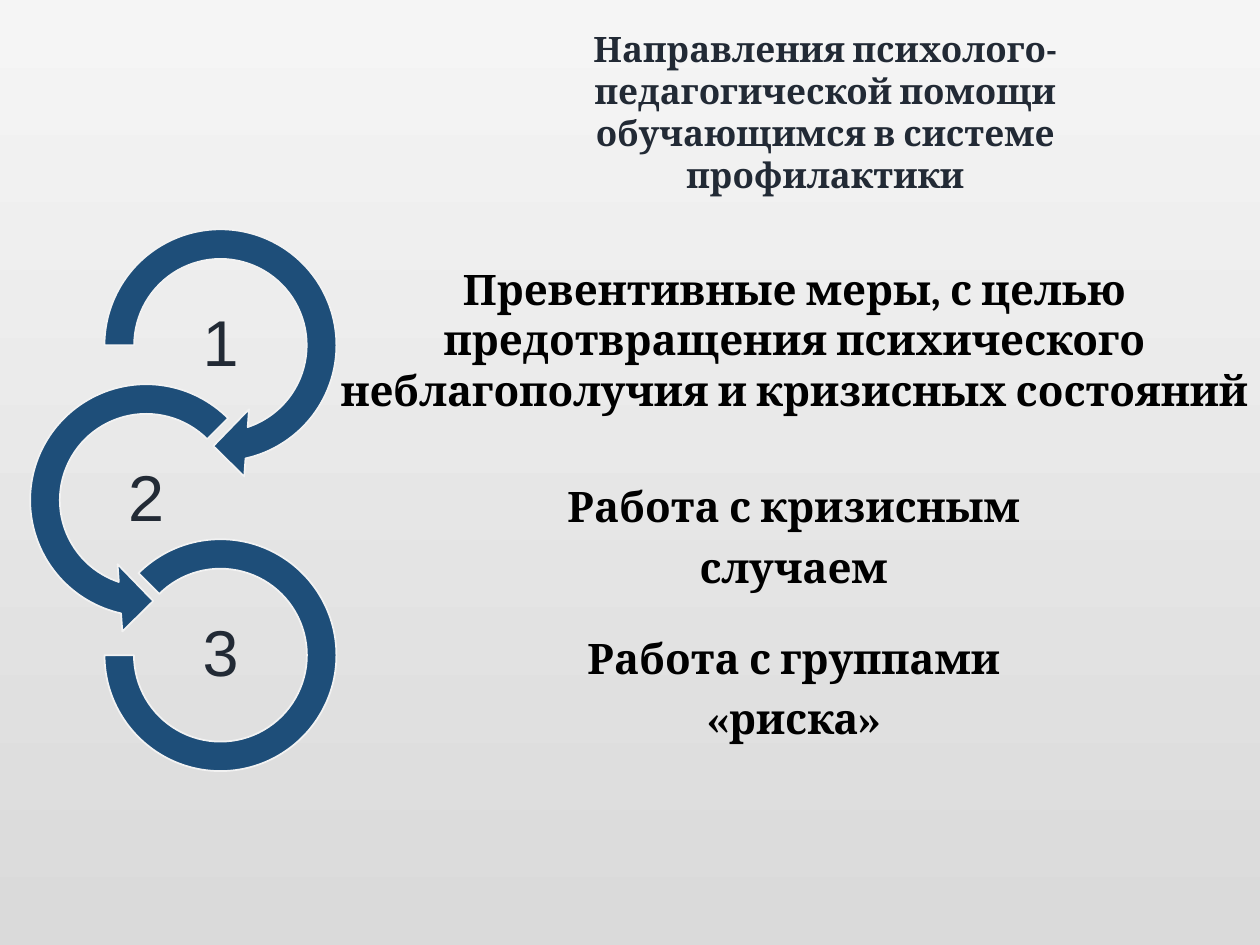
from pptx import Presentation
from pptx import util as u
from pptx.dml.color import RGBColor
from pptx.enum import shapes, text

KIND = shapes.MSO_SHAPE
INK, BLACK, BLUE, RIM = "222A35", "000000", "1E4E79", "F2F2F2"


def color(value):
    """Turn a hex string into a colour."""
    return RGBColor.from_string(value)


class Builder:
    """Hold the style and the current slide."""

    def __init__(self, deck):
        self.page = deck.slides.add_slide(deck.slide_layouts[5])
        self.group = self.page.shapes.add_group_shape()

    def background(self, top, bottom):
        """Fill the page with a vertical gradient."""
        fill = self.page.background.fill
        fill.gradient()
        fill.gradient_angle = 270
        for stop, value in zip(fill.gradient_stops, (top, bottom)):
            stop.color.rgb = color(value)

    def label(self, box, words, size, font, ink, bold=False, spacing=None):
        """Put one centred paragraph into a box."""
        frame = box.text_frame
        frame.word_wrap = True
        frame.auto_size = text.MSO_AUTO_SIZE.NONE
        frame.vertical_anchor = text.MSO_ANCHOR.TOP
        para = frame.paragraphs[0]
        para.alignment = text.PP_ALIGN.CENTER
        if spacing:
            para.line_spacing = spacing
        span = para.add_run()
        span.text = words
        span.font.size = u.Pt(size)
        span.font.name = font
        span.font.bold = bold
        span.font.color.rgb = color(ink)
        return frame

    def title(self, words, left, top, width, height):
        """Place the title."""
        box = self.page.shapes.title
        box.left, box.top = u.Inches(left), u.Inches(top)
        box.width, box.height = u.Inches(width), u.Inches(height)
        self.label(box, words, 20, "Cambria", INK, True)

    def statement(self, words, left, top, width, height, spacing=None):
        """Add a bold statement."""
        box = self.page.shapes.add_textbox(*map(u.Inches, (left, top, width, height)))
        self.label(box, words, 24, "Cambria", BLACK, True, spacing)

    def ring(self, kind, middle_x, middle_y, size, adjustments):
        """Add a ring around a middle point."""
        left, top = middle_x - size / 2, middle_y - size / 2
        shape = self.group.shapes.add_shape(kind, *map(u.Inches, (left, top, size, size)))
        for index, value in enumerate(adjustments):
            shape.adjustments[index] = value
        shape.shadow.inherit = False
        shape.fill.solid()
        shape.fill.fore_color.rgb = color(BLUE)
        shape.line.color.rgb = color(RIM)
        shape.line.width = u.Pt(1)

    def number(self, words, middle_x, middle_y):
        """Add a number inside a ring."""
        width, height = 1.19, 0.59
        left, top = middle_x - width / 2, middle_y - height / 2
        box = self.group.shapes.add_textbox(*map(u.Inches, (left, top, width, height)))
        frame = self.label(box, words, 37, "Arial", INK, spacing=0.9)
        frame.vertical_anchor = text.MSO_ANCHOR.MIDDLE
        frame.margin_left = frame.margin_right = u.Inches(0.03)
        frame.margin_top = frame.margin_bottom = u.Inches(0.03)


def main():
    """Build the slide."""
    deck = Presentation()
    deck.slide_width, deck.slide_height = u.Inches(10), u.Inches(7.5)
    builder = Builder(deck)
    builder.background("F5F5F5", "DADADA")
    builder.title(
        "Направления психолого-педагогической помощи обучающимся в системе профилактики",
        3.62, 0.17, 5.86, 1.43)

    rings = [
        (KIND.CIRCULAR_ARROW, 1.75, 2.14, (0.11, 11.42, 45, 108, 0.125)),
        (KIND.LEFT_CIRCULAR_ARROW, 1.16, 2.14, (0.11, 11.42, 63, 189, 0.125)),
        (KIND.BLOCK_ARC, 1.75, 1.84, (135, 108, 0.127)),
    ]
    for index, (kind, middle_x, size, adjustments) in enumerate(rings):
        middle_y = 2.74 + index * 1.23
        builder.ring(kind, middle_x, middle_y, size, adjustments)
        builder.number(str(index + 1), middle_x, middle_y)

    builder.statement(
        "Превентивные меры, с целью предотвращения психического "
        "неблагополучия и кризисных состояний", 2.49, 2.04, 7.63, 1.3)
    for words, top in (("Работа с кризисным случаем", 3.69),
                       ("Работа с группами «риска»", 4.89)):
        builder.statement(words, 4.1, top, 4.4, 1.06, u.Pt(34.4))
    deck.save("out.pptx")


if __name__ == "__main__":
    main()
